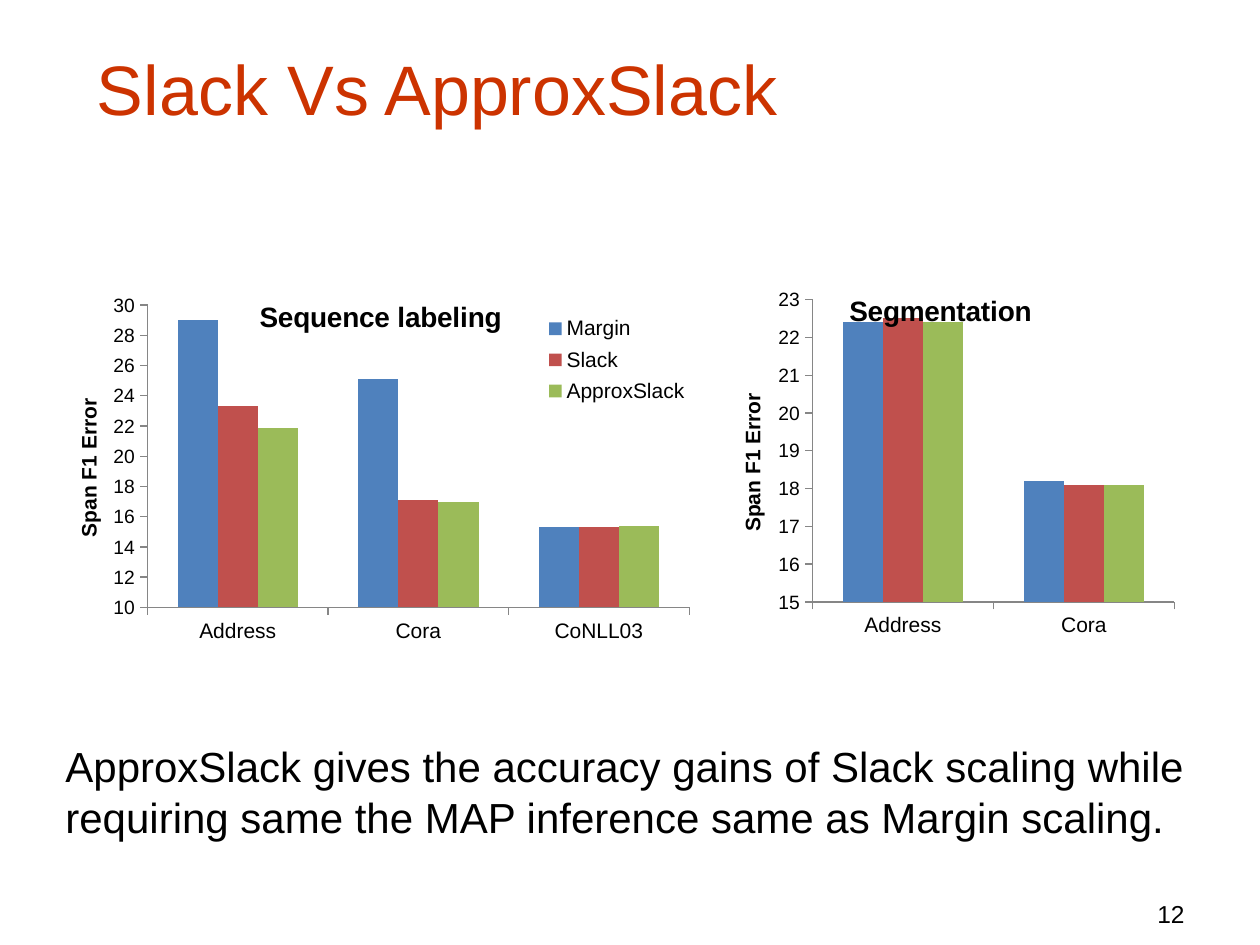
from lxml.etree import SubElement
from pptx import Presentation
from pptx.chart.data import CategoryChartData
from pptx.dml.color import RGBColor
from pptx.enum.chart import XL_CHART_TYPE as ChartType
from pptx.enum.chart import XL_LEGEND_POSITION as LegendPosition
from pptx.enum.chart import XL_TICK_MARK as TickMark
from pptx.enum.text import MSO_ANCHOR as Anchor
from pptx.enum.text import MSO_AUTO_SIZE as AutoSize
from pptx.enum.text import PP_ALIGN as Align
from pptx.oxml.ns import qn
from pptx.util import Cm, Pt

COLORS = {
    "title": "CC3300",
    "text": "000000",
    "axis": "868686",
    "margin": "4F81BD",
    "slack": "C0504D",
    "approx": "9BBB59",
}
FONT = "Arial"


def color(name):
    return RGBColor.from_string(COLORS[name])


def style_font(font, size, name="text", bold=None):
    font.name = FONT
    font.size = Pt(size)
    font.color.rgb = color(name)
    font.bold = bold


def place(shape, left, top, width, height):
    shape.left, shape.top = Cm(left), Cm(top)
    shape.width, shape.height = Cm(width), Cm(height)


def add_title(page, text):
    title = page.shapes.title
    place(title, 1.7, 0.84, 22.71, 1.9)
    frame = title.text_frame
    frame.text = text
    frame.auto_size = AutoSize.NONE
    frame.vertical_anchor = Anchor.BOTTOM
    para = frame.paragraphs[0]
    para.alignment = Align.LEFT
    style_font(para.font, 40, "title")


def add_text(page, lines, area, size, align=Align.LEFT, anchor=Anchor.TOP, wrap=True):
    box = page.shapes.add_textbox(*map(Cm, area))
    frame = box.text_frame
    frame.word_wrap = wrap
    frame.vertical_anchor = anchor
    frame.text = "\n".join(lines)
    for para in frame.paragraphs:
        para.alignment = align
        style_font(para.font, size)


def set_layout(element, index, inner=False, **fractions):
    for old in element.findall(qn("c:layout")):
        element.remove(old)
    layout = SubElement(element, qn("c:layout"))
    element.insert(index, layout)
    manual = SubElement(layout, qn("c:manualLayout"))
    if inner:
        SubElement(manual, qn("c:layoutTarget")).set("val", "inner")
    for key in ("x", "y"):
        SubElement(manual, qn(f"c:{key}Mode")).set("val", "edge")
    for key, value in fractions.items():
        SubElement(manual, qn(f"c:{key}")).set("val", str(value))


def style_axis(axis, size):
    axis.has_major_gridlines = False
    axis.major_tick_mark = TickMark.OUTSIDE
    axis.minor_tick_mark = TickMark.NONE
    axis.format.line.color.rgb = color("axis")
    axis.format.line.width = Pt(0.75)
    style_font(axis.tick_labels.font, size)


def add_chart_title(chart, text, x):
    title = chart.chart_title
    title.text_frame.text = text
    style_font(title.text_frame.paragraphs[0].font, 16, bold=True)
    set_layout(title.element if hasattr(title, "element") else title._element, 1, x=x, y=0.02)
    chart.element.find(f"{qn('c:chart')}/{qn('c:title')}/{qn('c:overlay')}").set("val", "1")


def add_legend(chart):
    chart.has_legend = True
    chart.legend.position = LegendPosition.RIGHT
    chart.legend.include_in_layout = False
    style_font(chart.legend.font, 12)
    legend = chart.element.find(f".//{qn('c:legend')}")
    set_layout(legend, 1, x=0.74, y=0.06, w=0.25, h=0.27)


def add_error_chart(page, title, title_x, area, plot_x, plot_width, scale, categories, series):
    data = CategoryChartData()
    data.categories = categories
    for name, values in series.items():
        data.add_series(name, values)
    chart = page.shapes.add_chart(ChartType.COLUMN_CLUSTERED, *map(Cm, area), data).chart
    style_font(chart.font, 10)
    add_chart_title(chart, title, title_x)
    chart.has_legend = False

    style_axis(chart.category_axis, 12)
    axis = chart.value_axis
    style_axis(axis, 11)
    axis.minimum_scale, axis.maximum_scale, axis.major_unit = scale
    axis.axis_title.text_frame.text = "Span F1 Error"
    style_font(axis.axis_title.text_frame.paragraphs[0].font, 12, bold=True)

    plot = chart.plots[0]
    plot.vary_by_categories = False
    plot.gap_width = 150
    plot.overlap = 0
    for bars, name in zip(plot.series, ("margin", "slack", "approx")):
        bars.format.fill.solid()
        bars.format.fill.fore_color.rgb = color(name)
    plot_area = chart.element.find(f".//{qn('c:plotArea')}")
    set_layout(plot_area, 0, inner=True, x=plot_x, y=0.05, w=plot_width, h=0.8)
    return chart


def main():
    deck = Presentation()
    deck.slide_width, deck.slide_height = Cm(25.4), Cm(19.05)
    page = deck.slides.add_slide(deck.slide_layouts[5])
    add_title(page, "Slack Vs ApproxSlack")

    labeling = add_error_chart(
        page, "Sequence labeling", 0.29, (1.45, 5.77, 12.7, 7.62), 0.12, 0.86,
        (10, 30, 2), ("Address", "Cora", "CoNLL03"),
        {
            "Margin": (29, 25.1, 15.3),
            "Slack": (23.3, 17.1, 15.3),
            "ApproxSlack": (21.9, 17, 15.4),
        },
    )
    add_legend(labeling)
    add_error_chart(
        page, "Segmentation", 0.24, (14.83, 5.66, 9.12, 7.62), 0.17, 0.8,
        (15, 23, 1), ("Address", "Cora"),
        {
            "Series 1": (22.4, 18.2),
            "Series 2": (22.5, 18.1),
            "Series 3": (22.4, 18.1),
        },
    )

    conclusion = (
        "ApproxSlack gives the accuracy gains of Slack scaling while",
        "requiring same the MAP inference same as Margin scaling.",
    )
    add_text(page, conclusion, (1.07, 14.81, 23.83, 2.31), 24, wrap=False)
    add_text(page, ["12"], (18.85, 17.58, 5.28, 1.27), 14, Align.RIGHT, Anchor.BOTTOM)
    deck.save("out.pptx")


if __name__ == "__main__":
    main()
